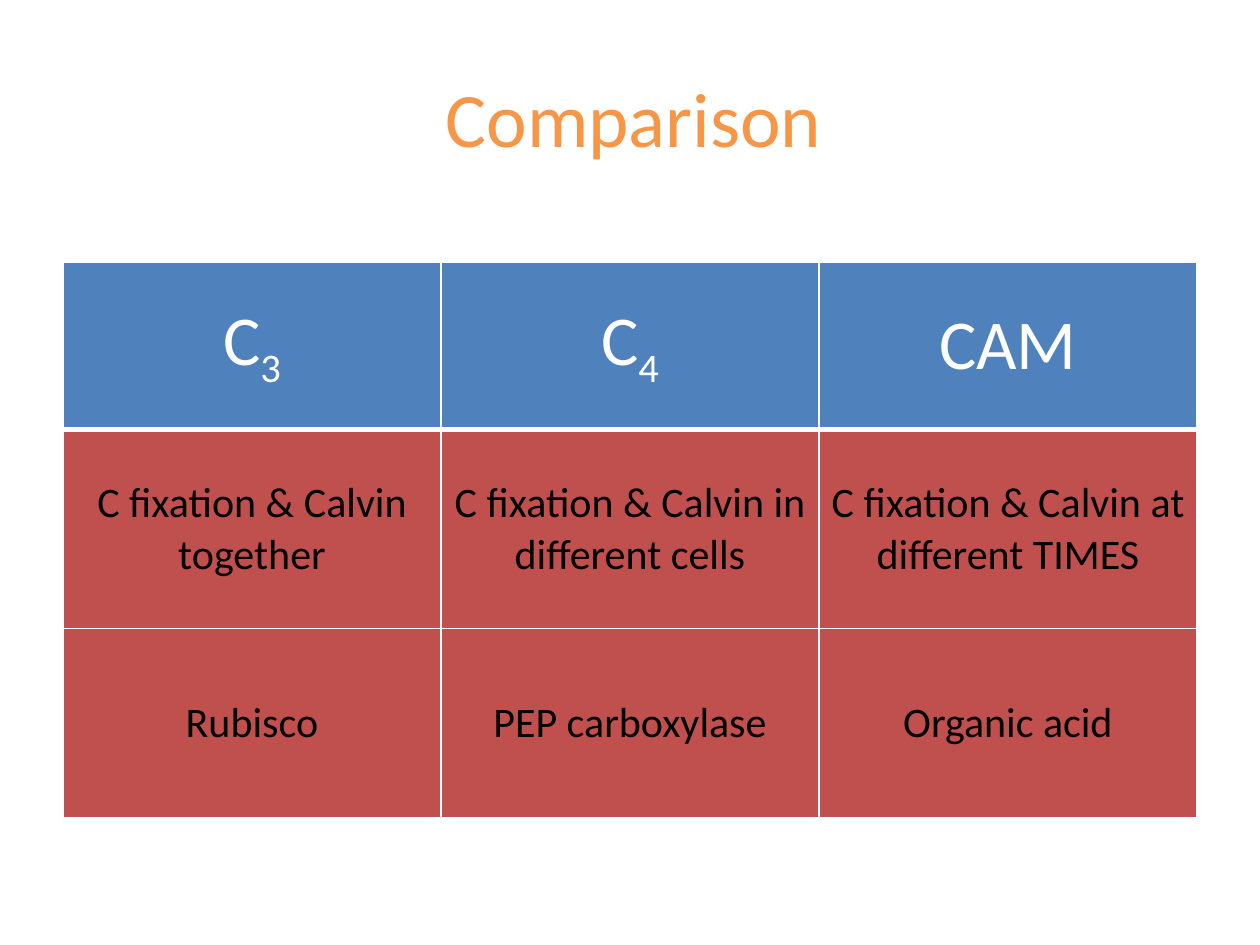
import dataclasses

import lxml.etree
import pptx
import pptx.dml.color
import pptx.enum.text
import pptx.oxml.ns
import pptx.util


@dataclasses.dataclass(frozen=True)
class Theme:
    font: str = "Calibri"
    title: str = "F79646"
    header_fill: str = "4F81BD"
    header_text: str = "FFFFFF"
    body_fill: str = "C0504D"
    body_text: str = "000000"
    border: str = "FFFFFF"
    title_size: int = 44
    header_size: int = 40
    body_size: int = 24
    thin: int = 1
    thick: int = 3


class Deck:
    def __init__(self, theme, width=10, height=7.5):
        self.theme = theme
        self.prs = pptx.Presentation()
        self.prs.slide_width = pptx.util.Inches(width)
        self.prs.slide_height = pptx.util.Inches(height)

    def add_slide(self):
        self.s = self.prs.slides.add_slide(self.prs.slide_layouts[5])

    def box(self, x, y, w, h):
        W, H = self.prs.slide_width, self.prs.slide_height
        return round(x * W), round(y * H), round(w * W), round(h * H)

    def style(self, p, size, color):
        p.alignment = pptx.enum.text.PP_ALIGN.CENTER
        for r in p.runs:
            r.font.name = self.theme.font
            r.font.size = pptx.util.Pt(size)
            r.font.bold = False
            r.font.color.rgb = pptx.dml.color.RGBColor.from_string(color)

    def title(self, text, x, y, w, h):
        sp = self.s.shapes.title
        sp.left, sp.top, sp.width, sp.height = self.box(x, y, w, h)
        tf = sp.text_frame
        tf.text = text
        tf.vertical_anchor = pptx.enum.text.MSO_ANCHOR.MIDDLE
        p = tf.paragraphs[0]
        pPr = p._p.get_or_add_pPr()
        pPr.set("marL", str(pptx.util.Inches(0.06)))
        pPr.set("indent", "0")
        self.style(p, self.theme.title_size, self.theme.title)

    def borders(self, cell, bottom):
        qn = pptx.oxml.ns.qn
        tcPr = cell._tc.get_or_add_tcPr()
        thin = self.theme.thin
        for side, width in zip("LRTB", (thin, thin, thin, bottom)):
            ln = lxml.etree.SubElement(tcPr, qn(f"a:ln{side}"), w=str(pptx.util.Pt(width)))
            fill = lxml.etree.SubElement(ln, qn("a:solidFill"))
            lxml.etree.SubElement(fill, qn("a:srgbClr"), val=self.theme.border)

    def cell(self, cell, text, subscript, header):
        t = self.theme
        size, color, fill, bottom = (
            (t.header_size, t.header_text, t.header_fill, t.thick) if header
            else (t.body_size, t.body_text, t.body_fill, t.thin))
        self.borders(cell, bottom)
        cell.fill.solid()
        cell.fill.fore_color.rgb = pptx.dml.color.RGBColor.from_string(fill)
        cell.vertical_anchor = pptx.enum.text.MSO_ANCHOR.MIDDLE
        p = cell.text_frame.paragraphs[0]
        p.text = text
        if subscript:
            r = p.add_run()
            r.text = subscript
            r._r.get_or_add_rPr().set("baseline", "-25000")
        self.style(p, size, color)

    def table(self, headers, rows, heights, x, y, w):
        h = sum(heights)
        tbl = self.s.shapes.add_table(
            len(rows) + 1, len(headers), *self.box(x, y, w, h)).table
        for row, share in zip(tbl.rows, heights):
            row.height = round(share * self.prs.slide_height)
        for c, (text, subscript) in enumerate(headers):
            self.cell(tbl.cell(0, c), text, subscript, True)
        for i, row in enumerate(rows, 1):
            for c, text in enumerate(row):
                self.cell(tbl.cell(i, c), text, "", False)

    def save(self):
        self.prs.save("out.pptx")


def main():
    deck = Deck(Theme())
    deck.add_slide()
    deck.title("Comparison", 0.05, 0.04, 0.9, 1.25 / 7.5)
    deck.table(
        headers=[("C", "3"), ("C", "4"), ("CAM", "")],
        rows=[
            ["C fixation & Calvin together",
             "C fixation & Calvin in different cells",
             "C fixation & Calvin at different TIMES"],
            ["Rubisco", "PEP carboxylase", "Organic acid"],
        ],
        heights=[1.33 / 7.5, 1.58 / 7.5, 0.2],
        x=0.05, y=2.08 / 7.5, w=0.9)
    deck.save()


if __name__ == "__main__":
    main()
